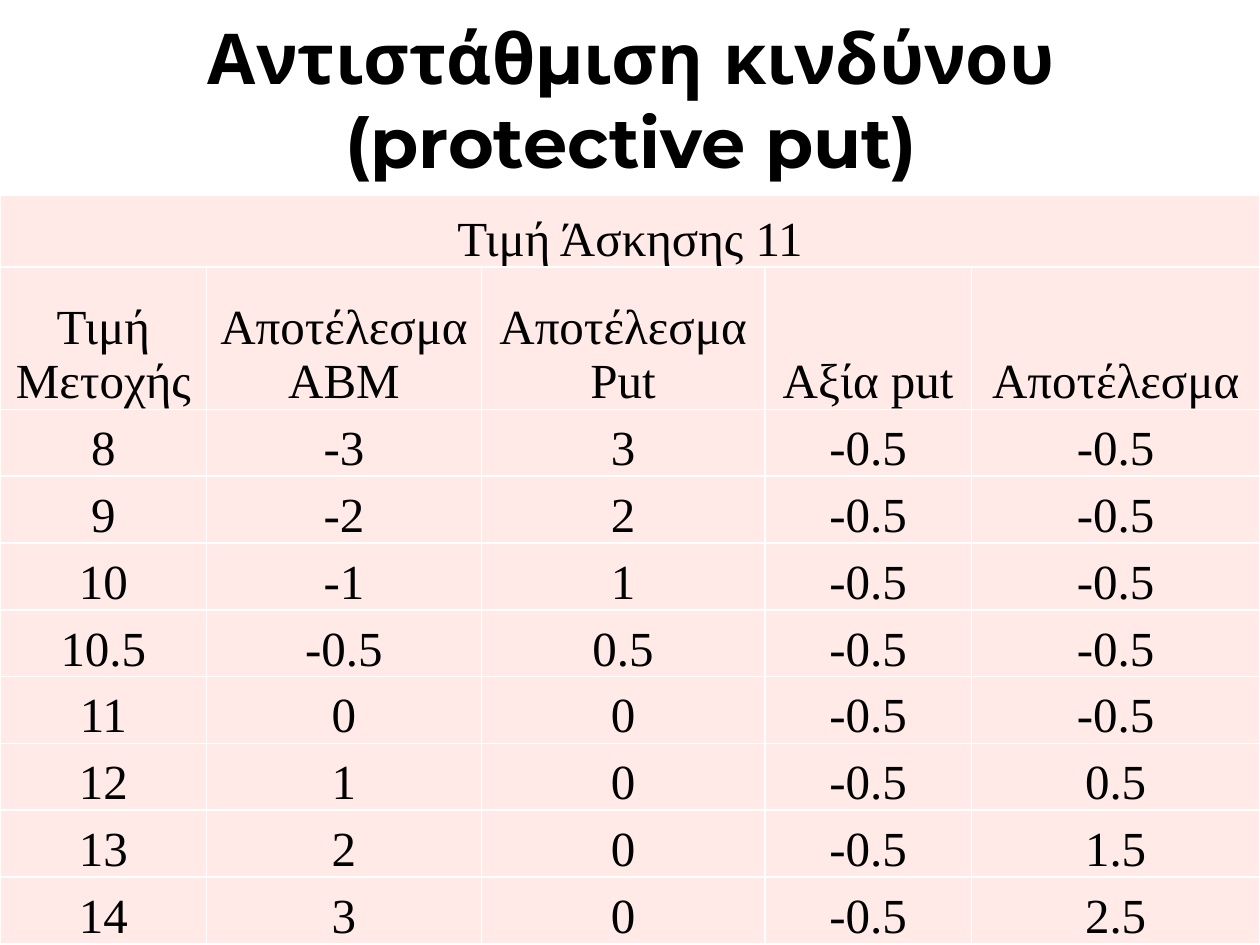
from lxml import etree
from pptx import Presentation
from pptx import util as u
from pptx.dml.color import RGBColor
from pptx.enum import text
from pptx.oxml.ns import qn

# Content
TITLE = "Αντιστάθμιση κινδύνου (protective put)"
CAPTION = "Τιμή Άσκησης 11"
HEADERS = ["Τιμή Μετοχής", "Αποτέλεσμα ΑΒΜ", "Αποτέλεσμα Put", "Αξία put", "Αποτέλεσμα"]
PAYOFFS = [
    ("8", "-3", "3", "-0.5", "-0.5"),
    ("9", "-2", "2", "-0.5", "-0.5"),
    ("10", "-1", "1", "-0.5", "-0.5"),
    ("10.5", "-0.5", "0.5", "-0.5", "-0.5"),
    ("11", "0", "0", "-0.5", "-0.5"),
    ("12", "1", "0", "-0.5", "0.5"),
    ("13", "2", "0", "-0.5", "1.5"),
    ("14", "3", "0", "-0.5", "2.5"),
]
ROWS = [(CAPTION, "", "", "", ""), HEADERS, *PAYOFFS]

# Layout in inches
WIDTH, HEIGHT = 10, 7.5
TABLE_TOP = 1.55
COLUMNS = [1.64, 2.18, 2.25, 1.64, 2.29]
ROW_HEIGHTS = [0.57, 1.13] + [0.53] * len(PAYOFFS)

BLACK = RGBColor(0x00, 0x00, 0x00)
WHITE = RGBColor(0xFF, 0xFF, 0xFF)
PINK = RGBColor(0xFF, 0xEA, 0xE7)


def style(p, name, size, bold=False):
    p.alignment = text.PP_ALIGN.CENTER
    p.font.name, p.font.size, p.font.bold = name, u.Pt(size), bold
    p.font.color.rgb = BLACK


def add_borders(cell, color, width):
    """Draw all four sides; border lines must come before the fill."""
    tcPr = cell._tc.get_or_add_tcPr()
    for i, side in enumerate(("a:lnL", "a:lnR", "a:lnT", "a:lnB")):
        ln = etree.Element(qn(side), w=str(u.Pt(width)))
        fill = etree.SubElement(ln, qn("a:solidFill"))
        etree.SubElement(fill, qn("a:srgbClr"), val=str(color))
        tcPr.insert(i, ln)


prs = Presentation()
prs.slide_width, prs.slide_height = u.Inches(WIDTH), u.Inches(HEIGHT)
s = prs.slides.add_slide(prs.slide_layouts[6])

# Title
sp = s.shapes.add_textbox(u.Inches(0.44), 0, u.Inches(9.14), u.Inches(1.5))
tf = sp.text_frame
tf.word_wrap = True
tf.vertical_anchor = text.MSO_ANCHOR.BOTTOM
tf.text = TITLE
style(tf.paragraphs[0], "Montserrat", 40, bold=True)

# Payoff table
table = s.shapes.add_table(len(ROWS), len(COLUMNS), 0, u.Inches(TABLE_TOP),
                           u.Inches(WIDTH), u.Inches(HEIGHT - TABLE_TOP)).table
table.first_row = table.horz_banding = False
for column, width in zip(table.columns, COLUMNS):
    column.width = u.Inches(width)
for row, height, values in zip(table.rows, ROW_HEIGHTS, ROWS):
    row.height = u.Inches(height)
    for cell, value in zip(row.cells, values):
        cell.text = value
        cell.vertical_anchor = text.MSO_ANCHOR.BOTTOM
        cell.margin_left = cell.margin_right = cell.margin_top = u.Inches(0.01)
        cell.margin_bottom = 0
        cell.fill.solid()
        cell.fill.fore_color.rgb = PINK
        add_borders(cell, WHITE, 1)
        style(cell.text_frame.paragraphs[0], "Times New Roman", 28)
table.cell(0, 0).merge(table.cell(0, len(COLUMNS) - 1))

prs.save("out.pptx")
